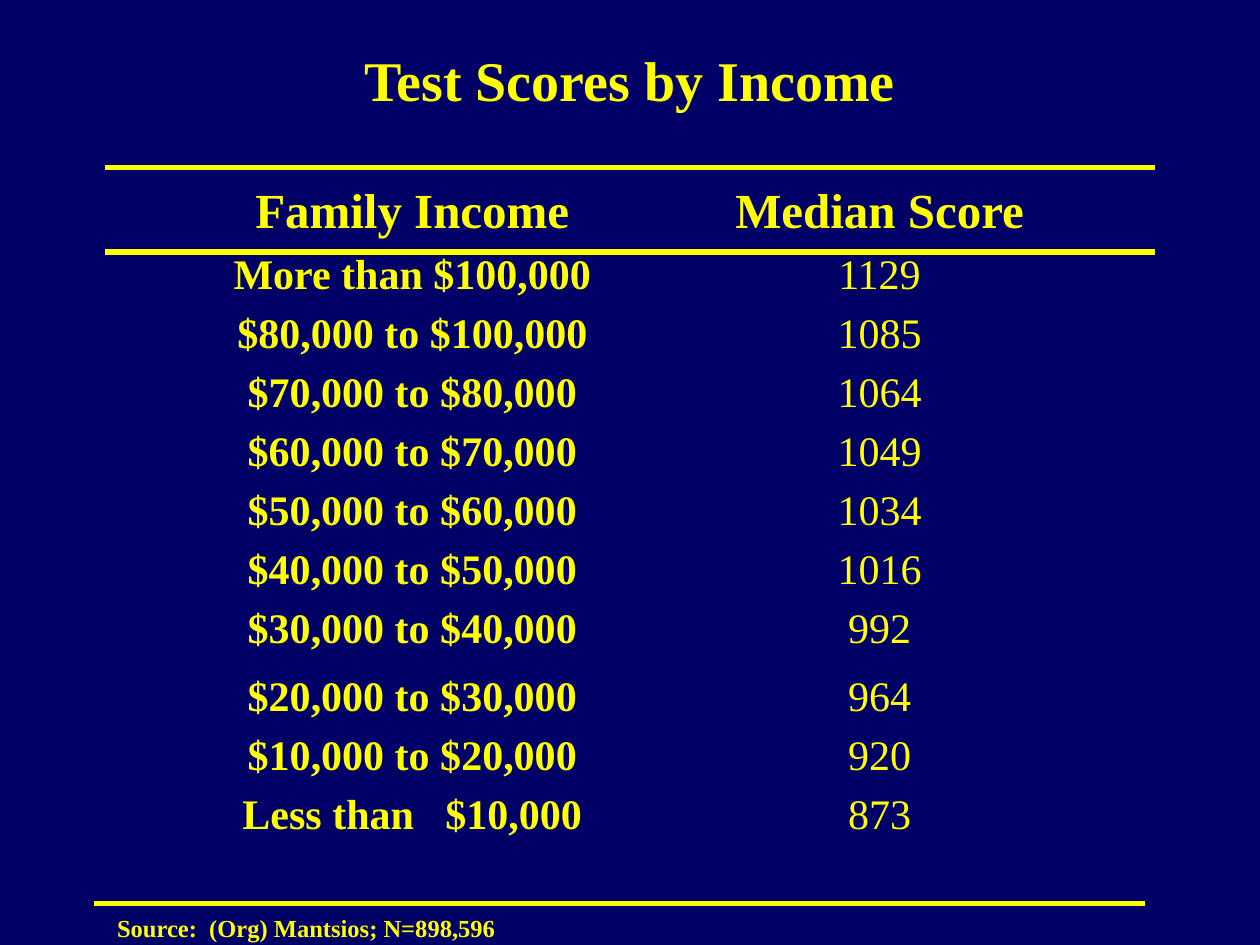
from lxml import etree
from pptx import Presentation
from pptx.dml.color import RGBColor
from pptx.enum.shapes import MSO_CONNECTOR
from pptx.enum.text import MSO_ANCHOR, PP_ALIGN
from pptx.oxml.ns import qn
from pptx.util import Cm, Pt

NAVY = RGBColor(0x00, 0x00, 0x66)
YELLOW = RGBColor(0xFF, 0xFF, 0x00)
FONT = "Times New Roman"
CENTER, LEFT = PP_ALIGN.CENTER, PP_ALIGN.LEFT
MIDDLE, BOTTOM, TOP = MSO_ANCHOR.MIDDLE, MSO_ANCHOR.BOTTOM, MSO_ANCHOR.TOP
STRAIGHT = MSO_CONNECTOR.STRAIGHT
TITLE_ONLY_LAYOUT = 5
PLAIN_TABLE_STYLE = "{2D5ABB26-0587-4C30-8999-92F81FD0307C}"

HEADINGS = ("Family Income", "Median Score")
SCORES = [
    ("More than $100,000", "1129"),
    ("$80,000 to $100,000", "1085"),
    ("$70,000 to $80,000", "1064"),
    ("$60,000 to $70,000", "1049"),
    ("$50,000 to $60,000", "1034"),
    ("$40,000 to $50,000", "1016"),
    ("$30,000 to $40,000", "992"),
    ("$20,000 to $30,000", "964"),
    ("$10,000 to $20,000", "920"),
    ("Less than   $10,000", "873"),
]
HEADER_HEIGHT, ROW_HEIGHT, TALL_ROW_HEIGHT = 1.35, 1.19, 1.37
TALL_ROW = 8
COLUMN_WIDTH = 9.42
RULE_WIDTH = 21.18
RULES = [(1.9, 18.21), (2.11, 5.08), (2.11, 3.38)]  # left, top


def write_text(text_frame, text, size, bold=True, alignment=CENTER):
    paragraph = text_frame.paragraphs[0]
    paragraph.alignment = alignment
    run = paragraph.add_run()
    run.text = text
    run.font.name = FONT
    run.font.size = Pt(size)
    run.font.bold = bold
    run.font.color.rgb = YELLOW


def add_title(slide, text):
    title = slide.shapes.title
    title.left, title.top = Cm(1.9), Cm(0)
    title.width, title.height = Cm(21.59), Cm(3.18)
    title.text_frame.vertical_anchor = MIDDLE
    write_text(title.text_frame, text, 32)


def fill_cell(cell, text, size, bold):
    cell.fill.background()
    cell.margin_top = cell.margin_bottom = Cm(0.1)
    cell.vertical_anchor = BOTTOM
    write_text(cell.text_frame, text, size, bold)


def add_score_table(slide):
    rows = [HEADINGS] + SCORES
    heights = [HEADER_HEIGHT] + [ROW_HEIGHT] * len(SCORES)
    heights[TALL_ROW] = TALL_ROW_HEIGHT
    frame = slide.shapes.add_table(
        len(rows), len(HEADINGS), Cm(3.6), Cm(3.57),
        Cm(COLUMN_WIDTH * len(HEADINGS)), Cm(sum(heights)))
    table = frame.table
    table.first_row = table.horz_banding = False
    table._tbl.tblPr.find(qn("a:tableStyleId")).text = PLAIN_TABLE_STYLE
    for column in table.columns:
        column.width = Cm(COLUMN_WIDTH)
    for row_index, values in enumerate(rows):
        table.rows[row_index].height = Cm(heights[row_index])
        is_header = row_index == 0
        for column_index, value in enumerate(values):
            fill_cell(table.cell(row_index, column_index), value,
                      28 if is_header else 24,
                      is_header or column_index == 0)


def add_source_note(slide, text):
    box = slide.shapes.add_textbox(Cm(2.11), Cm(18.29), Cm(12.67), Cm(0.76))
    box.text_frame.word_wrap = True
    box.text_frame.vertical_anchor = TOP
    write_text(box.text_frame, text, 14, alignment=LEFT)


def add_rule(slide, left, top):
    rule = slide.shapes.add_connector(
        STRAIGHT, Cm(left), Cm(top), Cm(left + RULE_WIDTH), Cm(top))
    rule.line.color.rgb = YELLOW
    rule.line.width = Pt(3)
    etree.SubElement(rule._element.spPr, qn("a:effectLst"))


def main():
    presentation = Presentation()
    presentation.slide_width, presentation.slide_height = Cm(25.4), Cm(19.05)
    slide = presentation.slides.add_slide(
        presentation.slide_layouts[TITLE_ONLY_LAYOUT])
    slide.background.fill.solid()
    slide.background.fill.fore_color.rgb = NAVY

    # Title and table
    add_title(slide, "Test Scores by Income")
    add_score_table(slide)

    # Source and horizontal rules
    add_source_note(slide, "Source:  (Org) Mantsios; N=898,596")
    for left, top in RULES:
        add_rule(slide, left, top)

    presentation.save("out.pptx")


if __name__ == "__main__":
    main()
